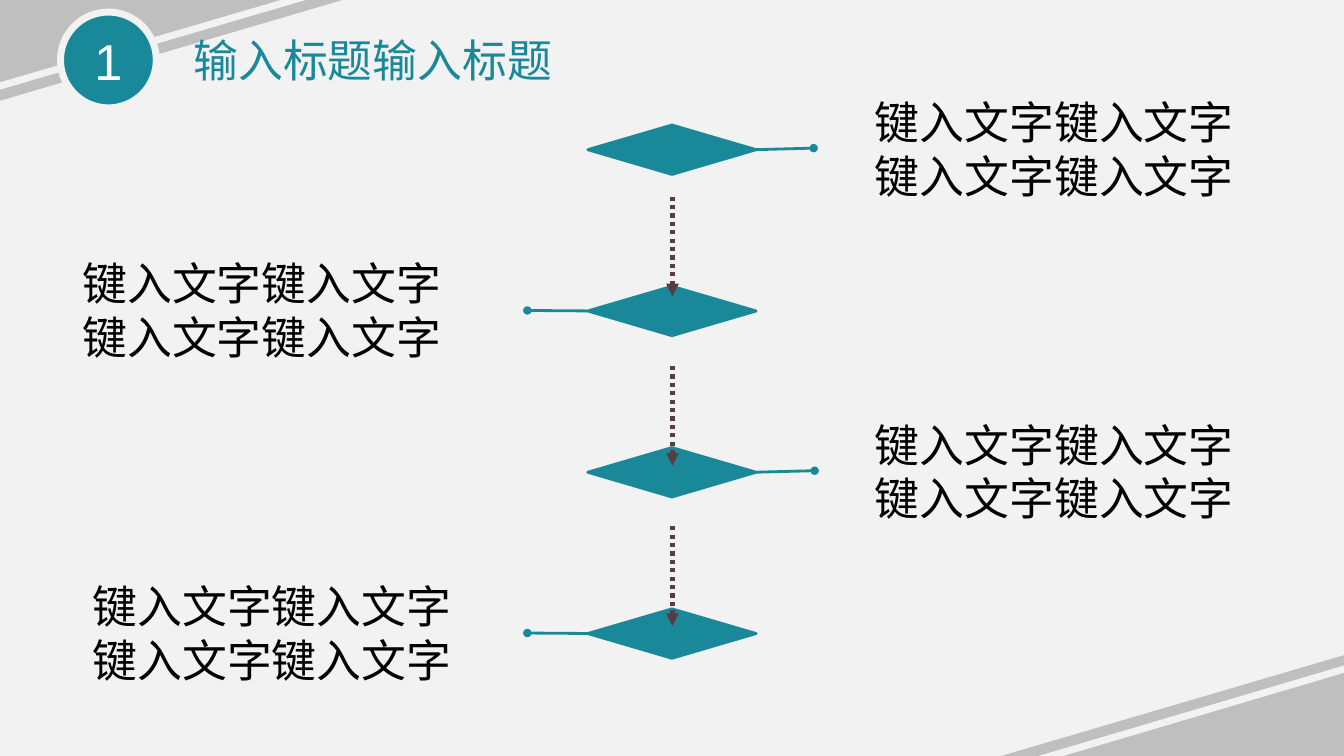
from dataclasses import dataclass

from lxml.etree import SubElement
from pptx import Presentation
from pptx.dml.color import RGBColor
from pptx.enum.dml import MSO_LINE_DASH_STYLE as Dash
from pptx.enum.shapes import MSO_CONNECTOR, MSO_SHAPE
from pptx.enum.text import MSO_ANCHOR as Anchor, MSO_AUTO_SIZE as AutoSize, PP_ALIGN as Align
from pptx.oxml.ns import qn
from pptx.shapes.autoshape import Shape
from pptx.shapes.connector import Connector
from pptx.slide import Slide
from pptx.util import Inches, Pt

TEAL = RGBColor(0x19, 0x88, 0x98)
BROWN = RGBColor(0x55, 0x3D, 0x43)
GREY = RGBColor(0xBF, 0xBF, 0xBF)
PAPER = RGBColor(0xF2, 0xF2, 0xF2)
BLACK = RGBColor(0, 0, 0)
WHITE = RGBColor(0xFF, 0xFF, 0xFF)

WIDTH, HEIGHT = 13.33, 7.5
CORNER_WIDTH, CORNER_HEIGHT = 3.4, 1
DIAMOND_LEFT, DIAMOND_WIDTH, DIAMOND_HEIGHT = 5.83, 1.67, 0.49
FIRST_DIAMOND_TOP, STEP_PITCH = 1.24, 1.6
TEXT_RISE = 0.35
ARROW_X, ARROW_LENGTH = 6.67, 0.99
ARROW_TOPS = (1.95, 3.63, 5.22)
LEFT_SITE, RIGHT_SITE = 1, 3


@dataclass
class Step:
    text: str
    text_left: float
    site: int
    tip_x: float
    tip_y: float


STEP_TEXT = "键入文字" * 4
STEPS = (
    Step(STEP_TEXT, 8.58, RIGHT_SITE, 8.07, 1.47),
    Step(STEP_TEXT, 0.72, LEFT_SITE, 5.23, 3.08),
    Step(STEP_TEXT, 8.58, RIGHT_SITE, 8.08, 4.67),
    Step(STEP_TEXT, 0.82, LEFT_SITE, 5.23, 6.28),
)


def write_text(shape: Shape, text: str, *, size: float = 32, font: str = "Calibri",
               color: RGBColor = BLACK, align: Align = Align.LEFT,
               anchor: Anchor = Anchor.TOP) -> None:
    frame = shape.text_frame
    frame.word_wrap = True
    frame.vertical_anchor = anchor
    paragraph = frame.paragraphs[0]
    paragraph.alignment = align
    run = paragraph.add_run()
    run.text = text
    run.font.size = Pt(size)
    run.font.name = font
    run.font.color.rgb = color


def add_text_box(slide: Slide, left: float, top: float, width: float, height: float,
                 text: str, color: RGBColor = BLACK) -> None:
    box = slide.shapes.add_textbox(Inches(left), Inches(top), Inches(width), Inches(height))
    write_text(box, text, color=color)
    box.text_frame.auto_size = AutoSize.SHAPE_TO_FIT_TEXT


def add_shape(slide: Slide, kind: MSO_SHAPE, left: float, top: float, width: float,
              height: float, fill: RGBColor, line: RGBColor | None = None,
              line_width: float = 2) -> Shape:
    shape = slide.shapes.add_shape(kind, Inches(left), Inches(top), Inches(width), Inches(height))
    shape.shadow.inherit = False
    shape.fill.solid()
    shape.fill.fore_color.rgb = fill
    if line is None:
        shape.line.fill.background()
    else:
        shape.line.color.rgb = line
        shape.line.width = Pt(line_width)
    return shape


def add_line(slide: Slide, start: tuple[float, float], end: tuple[float, float],
             color: RGBColor, width: float, *, dash: Dash | None = None,
             tail: str | None = None) -> Connector:
    connector = slide.shapes.add_connector(
        MSO_CONNECTOR.STRAIGHT, *(Inches(value) for value in start + end))
    connector.line.color.rgb = color
    connector.line.width = Pt(width)
    if dash is not None:
        connector.line.dash_style = dash
    properties = connector._element.spPr
    if tail is not None:
        SubElement(properties.find(qn("a:ln")), qn("a:tailEnd"), type=tail)
    SubElement(properties, qn("a:effectLst"))
    return connector


def add_corner(slide: Slide, left: float, top: float, rotation: float,
               stripe_start: tuple[float, float], stripe_end: tuple[float, float]) -> None:
    triangle = add_shape(slide, MSO_SHAPE.RIGHT_TRIANGLE, left, top,
                         CORNER_WIDTH, CORNER_HEIGHT, GREY)
    triangle.rotation = rotation
    triangle._element.spPr.xfrm.set("flipV", "1")
    add_line(slide, stripe_start, stripe_end, PAPER, 5)


def add_steps(slide: Slide) -> None:
    tops = [FIRST_DIAMOND_TOP + index * STEP_PITCH for index in range(len(STEPS))]
    diamonds = [add_shape(slide, MSO_SHAPE.DIAMOND, DIAMOND_LEFT, top, DIAMOND_WIDTH,
                          DIAMOND_HEIGHT, TEAL, TEAL) for top in tops]

    # Dotted arrows between the steps
    for top in ARROW_TOPS:
        add_line(slide, (ARROW_X, top), (ARROW_X, top + ARROW_LENGTH), BROWN, 3,
                 dash=Dash.ROUND_DOT, tail="triangle")

    # Callout line and text of each step
    for step, diamond, top in zip(STEPS, diamonds, tops):
        tip = (step.tip_x, step.tip_y)
        callout = add_line(slide, tip, tip, TEAL, 2, tail="oval")
        callout.begin_connect(diamond, step.site)
        add_text_box(slide, step.text_left, top - TEXT_RISE, 3.84, 1.18, step.text)


def main() -> None:
    presentation = Presentation()
    presentation.slide_width = Inches(WIDTH)
    presentation.slide_height = Inches(HEIGHT)
    slide = presentation.slides.add_slide(presentation.slide_layouts[6])
    slide.background.fill.solid()
    slide.background.fill.fore_color.rgb = PAPER

    # Corners and number badge
    add_corner(slide, 0, 0, 0, (4.51, -0.47), (-0.16, 0.9))
    badge = add_shape(slide, MSO_SHAPE.OVAL, 0.6, 0.12, 0.95, 0.95, TEAL, PAPER, 5)
    write_text(badge, "1", size=36, font="Arial", color=WHITE,
               align=Align.CENTER, anchor=Anchor.MIDDLE)
    add_corner(slide, WIDTH - CORNER_WIDTH, HEIGHT - CORNER_HEIGHT, 180,
               (9.78, 7.69), (14.44, 6.31))

    # Title and flow
    add_text_box(slide, 1.82, 0.28, 5.69, 0.64, "输入标题输入标题", TEAL)
    add_steps(slide)

    presentation.save("out.pptx")


if __name__ == "__main__":
    main()
